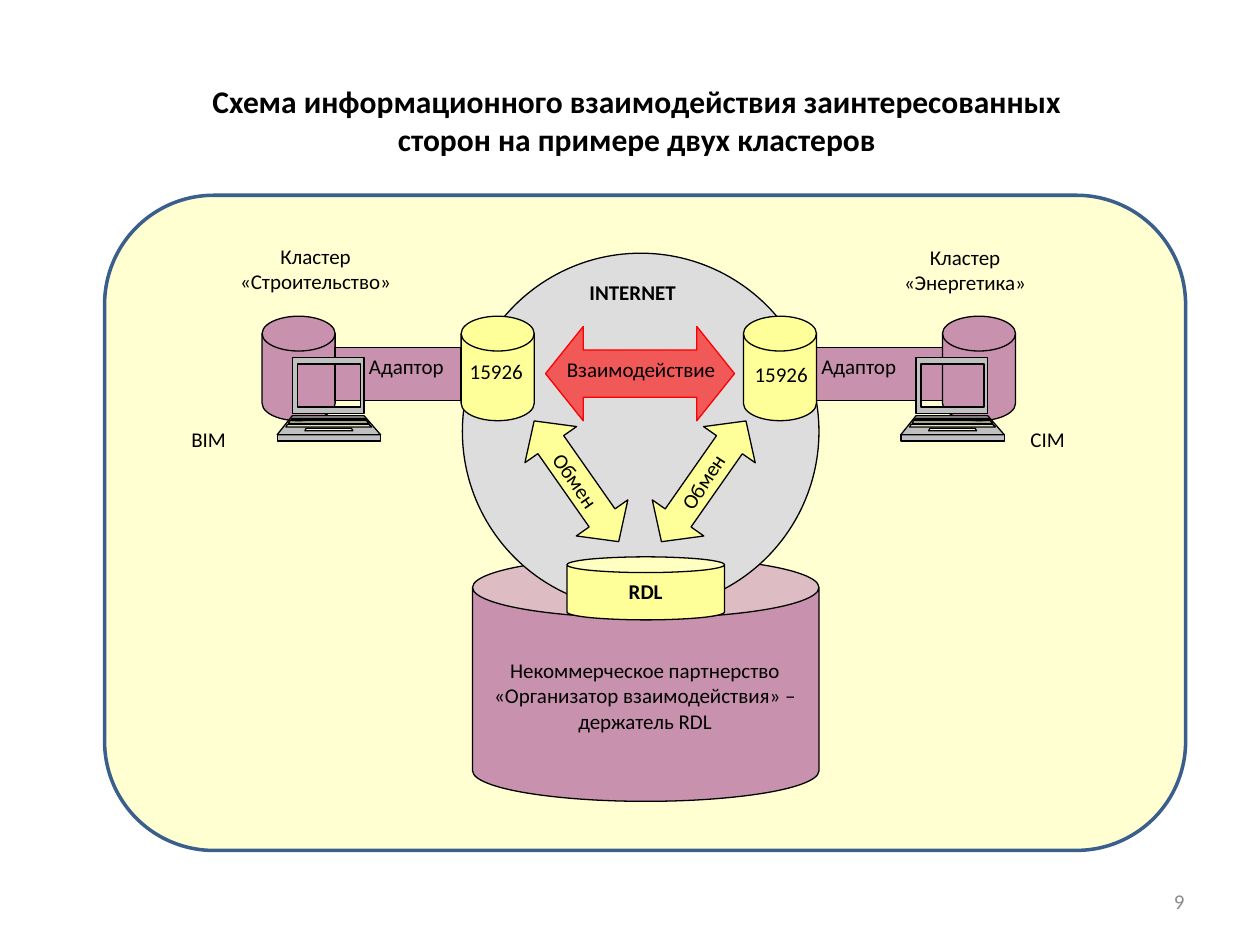
from lxml import etree
from pptx import Presentation
from pptx.dml.color import RGBColor
from pptx.enum.shapes import MSO_SHAPE
from pptx.enum.text import MSO_ANCHOR, MSO_AUTO_SIZE, PP_ALIGN
from pptx.oxml.ns import qn
from pptx.util import Inches, Pt

ROUND = MSO_SHAPE.ROUNDED_RECTANGLE
CAN = MSO_SHAPE.CAN
DISK = MSO_SHAPE.FLOWCHART_MAGNETIC_DISK
OVAL = MSO_SHAPE.OVAL
LINK = MSO_SHAPE.FLOWCHART_PROCESS
ARROW = MSO_SHAPE.LEFT_RIGHT_ARROW
LEFT, CENTER, RIGHT = PP_ALIGN.LEFT, PP_ALIGN.CENTER, PP_ALIGN.RIGHT
TOP, MIDDLE = MSO_ANCHOR.TOP, MSO_ANCHOR.MIDDLE
FIXED = MSO_AUTO_SIZE.NONE

BLACK = "000000"
PURPLE = "800080"
CREAM = "FFFF99"
RED = "FF0000"

COMPUTER = [
    (0, 44, 12, 69, 12, 69),
    (46, 61, 12, 69, 0, 82),
    (61, 66, 0, 82, 0, 82),
    (5, 39, 16, 66, 16, 66),
    (48, 49, 12, 69, 11, 71),
    (56, 58, 23, 59, 22, 60),
    (50, 52, 10, 71, 9, 73),
    (53, 55, 8, 73, 7, 75),
]


def color(code):
    return RGBColor.from_string(code)


def apply(item, values):
    for name, value in values.items():
        setattr(item, name, value)


class Board:
    font = {"name": "Calibri", "size": Pt(12), "bold": False}
    frame = {"word_wrap": True, "auto_size": FIXED, "vertical_anchor": TOP}

    def __init__(self, deck):
        self.slide = deck.slides.add_slide(deck.slide_layouts[5])
        self.shapes = self.slide.shapes

    def paint(self, shape, fill, line=BLACK, width=0.75, alpha=100):
        shape.shadow.inherit = False
        shape.fill.solid()
        shape.fill.fore_color.rgb = color(fill)
        if alpha < 100:
            tint = shape.element.spPr.find(qn("a:solidFill")).find(qn("a:srgbClr"))
            etree.SubElement(tint, qn("a:alpha")).set("val", str(alpha * 1000))
        shape.line.color.rgb = color(line)
        shape.line.width = Pt(width)

    def shape(self, kind, place, fill, turn=0, head=None, **style):
        shape = self.shapes.add_shape(kind, *map(Inches, place))
        self.paint(shape, fill, **style)
        shape.rotation = turn
        if head:
            shape.adjustments[1] = head

    def computer(self, left, top):
        pen = None
        for high, low, a, b, c, d in COMPUTER:
            if pen is None:
                pen = self.shapes.build_freeform(a, high, scale=Inches(0.01))
            else:
                pen.move_to(a, high)
            pen.add_line_segments([(b, high), (d, low), (c, low)], close=True)
        self.paint(pen.convert_to_shape(Inches(left), Inches(top)), "C0C0C0")

    def letter(self, box, text, align=LEFT, tone=BLACK, anchor=TOP, **font):
        frame = box.text_frame
        apply(frame, {**self.frame, "vertical_anchor": anchor})
        para = frame.paragraphs[0]
        para.alignment = align
        run = para.add_run()
        run.text = text
        apply(run.font, {**self.font, **font})
        run.font.color.rgb = color(tone)

    def label(self, place, text, turn=0, **style):
        box = self.shapes.add_textbox(*map(Inches, place))
        box.rotation = turn
        self.letter(box, text, **style)

    def title(self, place, text):
        box = self.shapes.title
        sides = ("left", "top", "width", "height")
        apply(box, dict(zip(sides, map(Inches, place))))
        self.letter(box, text, align=CENTER, size=Pt(18), bold=True)


def main():
    deck = Presentation()
    deck.slide_width, deck.slide_height = Inches(10), Inches(7.5)
    board = Board(deck)

    board.title((1.22, 0.6, 7.67, 0.71),
                "Схема информационного взаимодействия заинтересованных "
                "сторон на примере двух кластеров")
    board.shape(ROUND, (0.83, 1.55, 8.58, 5.2), "FFFF00",
                line="3A5F8C", width=2, alpha=18)
    board.shape(CAN, (3.75, 4.42, 2.75, 1.94), PURPLE, alpha=43)
    board.shape(OVAL, (3.67, 2.01, 2.83, 2.83), "DDDDDD")

    for left in (2.08, 7.48):
        board.shape(DISK, (left, 2.51, 0.58, 0.83), PURPLE, alpha=43)
    for left in (3.66, 5.9):
        board.shape(DISK, (left, 2.51, 0.58, 0.83), CREAM)
    for link, desk in ((6.48, 7.15), (2.66, 2.2)):
        board.shape(LINK, (link, 2.76, 1, 0.42), PURPLE, alpha=43)
        board.computer(desk, 2.84)

    board.shape(ARROW, (4.33, 2.59, 1.5, 0.75), RED, line=RED, alpha=60, head=0.4)
    board.shape(CAN, (4.5, 4.42, 1.25, 0.5), CREAM)
    for left, turn in ((3.99, 55), (5, 125)):
        board.shape(ARROW, (left, 3.57, 1.17, 0.5), CREAM, turn=turn, head=0.46)

    for place, text in (
        ((4.4, 2.78, 1.66, 0.3), "Взаимодействие"),
        ((2.83, 2.76, 0.92, 0.3), "Адаптор"),
        ((6.42, 2.76, 0.92, 0.3), "Адаптор"),
        ((3.63, 2.8, 0.67, 0.3), "15926"),
        ((5.89, 2.82, 0.67, 0.3), "15926"),
        ((1.42, 3.34, 0.75, 0.3), "BIM"),
        ((8.08, 3.34, 0.75, 0.3), "CIM"),
    ):
        board.label(place, text)
    for place, text in (
        ((1.67, 1.88, 1.67, 0.5), "Кластер «Строительство»"),
        ((6.78, 1.89, 1.76, 0.5), "Кластер «Энергетика»"),
        ((3.74, 5.17, 2.76, 0.71), "Некоммерческое партнерство "
         "«Организатор взаимодействия» – держатель RDL"),
    ):
        board.label(place, text, align=CENTER)
    for left, top, turn in ((4.09, 3.93, 55), (5.09, 3.4, 303)):
        board.label((left, top, 1.33, 0.3), "Обмен", turn=turn)

    board.label((4.58, 2.17, 1.25, 0.3), "INTERNET", bold=True)
    board.label((4.71, 4.54, 0.83, 0.3), "RDL", align=CENTER, bold=True)
    board.label((7.17, 6.95, 2.33, 0.4), "9", align=RIGHT, tone="8C8C8C", anchor=MIDDLE)
    deck.save("out.pptx")


if __name__ == "__main__":
    main()
